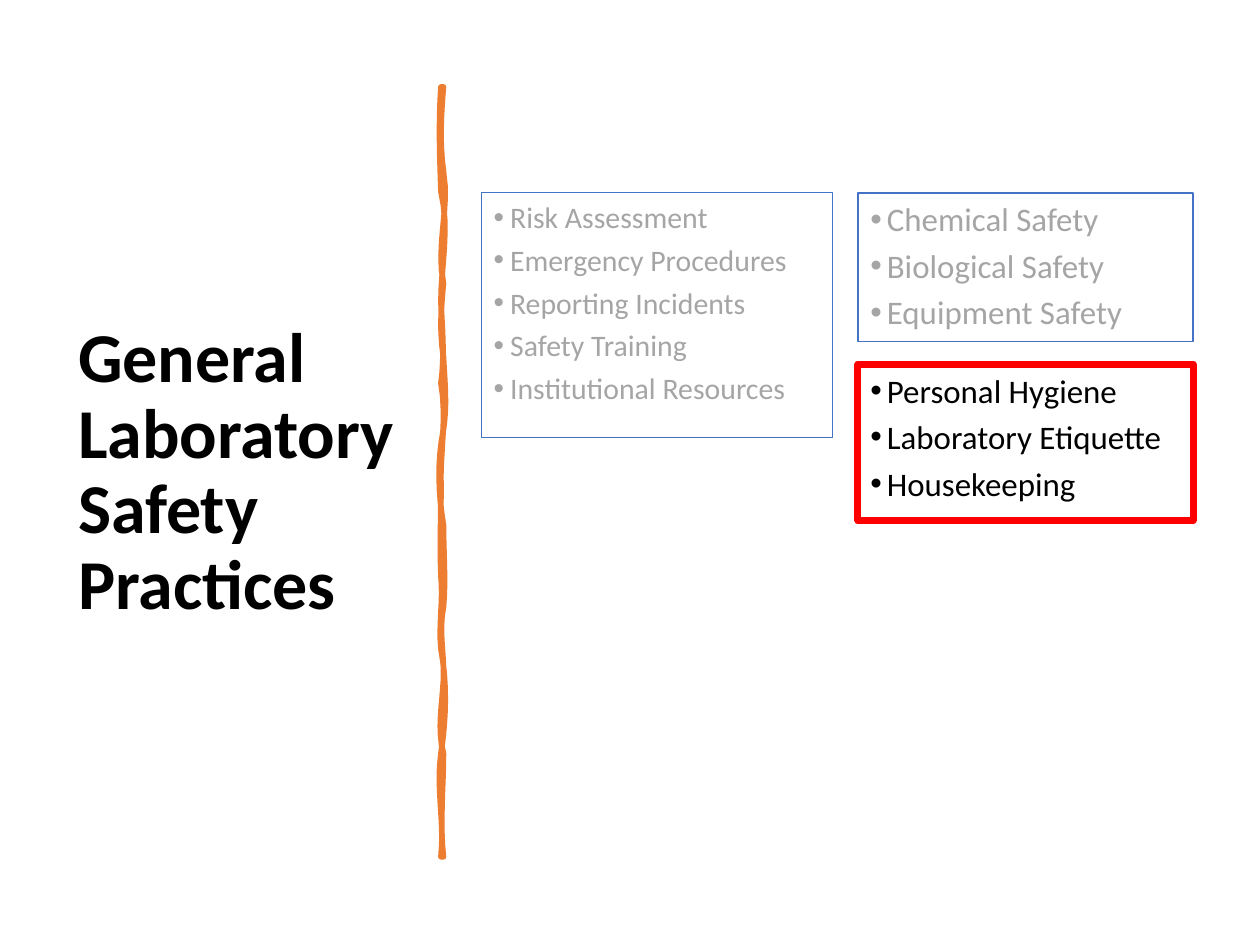
from pptx import Presentation
from pptx.dml.color import RGBColor as RGB
from pptx.enum.shapes import MSO_SHAPE as SHAPE
from pptx.enum.text import MSO_ANCHOR as ANCHOR, MSO_AUTO_SIZE as FIT, PP_ALIGN as ALIGN
from pptx.oxml.ns import qn
from pptx.util import Pt
from lxml.etree import SubElement as Sub

COLORS = {"text": "000000", "dim": "A5A5A5", "blue": "4472C4",
          "red": "FF0000", "rule": "ED7D31"}

# Brush stroke edges: bend of both curve handles, then the y where the curve ends
TOP, LEFT, RIGHT = 49.7, 252, 253.4
DOWN = [(-1.4, -0.7, 109.4), (5, 0, 172.8), (0.7, 2.2, 218.9), (3.6, -0.7, 278.6),
        (0, -0.7, 329), (1.4, -1.4, 370.8), (3.6, 2.9, 430.6), (-2.9, 2.2, 489.6)]
UP = [(-2.2, 0, 430.6), (-3.6, -0.7, 388.8), (0.7, -2.9, 347), (1.4, 0, 300.2),
      (-2.9, -3.6, 245.5), (2.2, 0.7, 203.8), (-2.2, -1.4, 162),
      (-4.3, 3.6, 97.9), (-2.2, -1.4, TOP)]

# Topic boxes: place, text size, text colour, line colour, line width, items
BOXES = [
    ((275, 110.2, 200.9, 139.7), 17, "dim", "blue", 0.75,
     ["Risk Assessment", "Emergency Procedures", "Reporting Incidents",
      "Safety Training", "Institutional Resources"]),
    ((490.3, 110.2, 191.5, 85), 18.8, "dim", "blue", 0.75,
     ["Chemical Safety", "Biological Safety", "Equipment Safety"]),
    ((490.3, 208.1, 191.5, 89.3), 18.8, "text", "red", 4,
     ["Personal Hygiene", "Laboratory Etiquette", "Housekeeping"]),
]


def tint(name):
    return RGB.from_string(COLORS[name])


def put(item, values):
    for key, value in values.items():
        setattr(item, key, value)


def style(font, size, color, bold=False):
    put(font, {"name": "Calibri", "size": Pt(size), "bold": bold})
    font.color.rgb = tint(color)


def outline(shape, color, width):
    shape.shadow.inherit = False
    shape.line.color.rgb = tint(color)
    shape.line.width = Pt(width)
    Sub(shape._element.spPr.find(qn("a:ln")), qn("a:round"))


def add_title(slide, text):
    title = slide.shapes.title
    put(title, {"left": Pt(37.4), "top": Pt(50.4), "width": Pt(202.3), "height": Pt(440)})
    frame = title.text_frame
    put(frame, {"text": text, "word_wrap": True, "auto_size": FIT.NONE,
                "vertical_anchor": ANCHOR.MIDDLE})
    para = frame.paragraphs[0]
    put(para, {"alignment": ALIGN.LEFT, "line_spacing": 0.9})
    style(para.runs[0].font, 40, "text", True)


def trace(x, top, curves, steps=8):
    """Points along a chain of curves whose ends share one x."""
    for bend, turn, end in curves:
        for i in range(1, steps + 1):
            t = i / steps
            sway = 3 * t * (1 - t) * ((1 - t) * bend + t * turn)
            yield Pt(x + sway), Pt(top + (end - top) * t)
        top = end


def add_stroke(slide):
    foot = DOWN[-1][2]
    build = slide.shapes.build_freeform(Pt(LEFT), Pt(TOP))
    build.add_line_segments(list(trace(LEFT, TOP, DOWN)), close=False)
    build.add_line_segments([(Pt(RIGHT), Pt(foot)), *trace(RIGHT, foot, UP)])
    stroke = build.convert_to_shape()
    stroke.fill.solid()
    stroke.fill.fore_color.rgb = tint("rule")
    outline(stroke, "rule", 3.25)


def add_bullet(para, color):
    props = para._p.get_or_add_pPr()
    props.set("marL", str(Pt(9.4)))
    props.set("indent", str(-Pt(9.4)))
    Sub(Sub(props, qn("a:buClr")), qn("a:srgbClr"), val=COLORS[color])
    Sub(props, qn("a:buFont"), typeface="Arial")
    Sub(props, qn("a:buChar"), char="•")


def add_box(slide, place, size, color, edge, width, items):
    box = slide.shapes.add_shape(SHAPE.RECTANGLE, *map(Pt, place))
    box.fill.background()
    outline(box, edge, width)
    frame = box.text_frame
    put(frame, {"word_wrap": True, "vertical_anchor": ANCHOR.TOP})
    for i, item in enumerate(items):
        para = frame.add_paragraph() if i else frame.paragraphs[0]
        add_bullet(para, color)
        put(para, {"text": item, "alignment": ALIGN.LEFT, "space_before": Pt(4 if i else 0)})
        style(para.runs[0].font, size, color)


def main():
    deck = Presentation()
    put(deck, {"slide_width": Pt(720), "slide_height": Pt(540)})
    slide = deck.slides.add_slide(deck.slide_layouts[5])
    add_title(slide, "General Laboratory Safety Practices")
    add_stroke(slide)
    for box in BOXES:
        add_box(slide, *box)
    deck.save("out.pptx")


if __name__ == "__main__":
    main()
